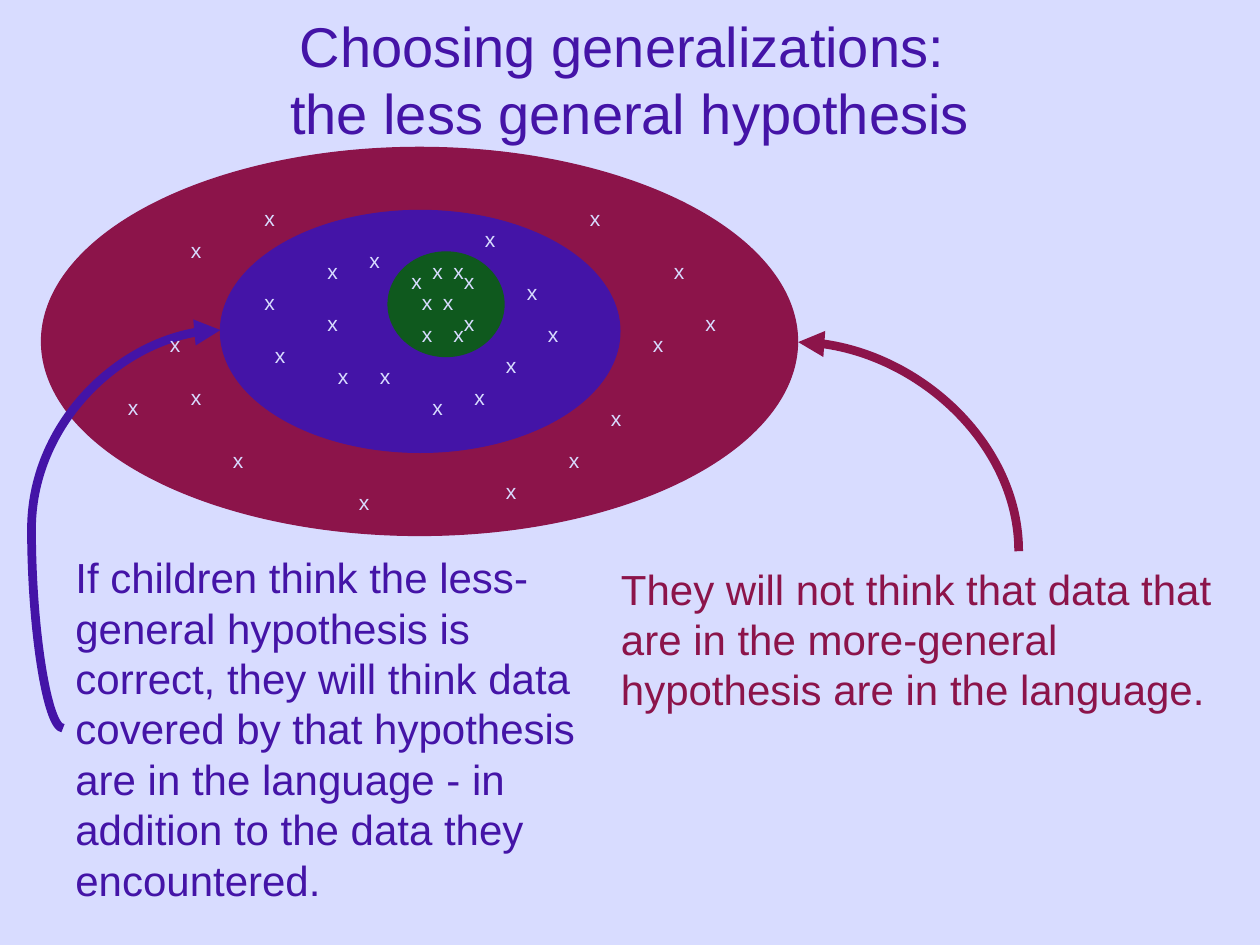
import pptx
import pptx.dml.color
import pptx.enum.shapes
import pptx.enum.text
import pptx.oxml.ns
import pptx.oxml.xmlchemy
import pptx.util

Inches = pptx.util.Inches
Pt = pptx.util.Pt
Anchor = pptx.enum.text.MSO_ANCHOR
Align = pptx.enum.text.PP_ALIGN
AutoSize = pptx.enum.text.MSO_AUTO_SIZE

PALE, BLUE, RED, GREEN = "D8DCFF", "4414A7", "8C144A", "0F591E"
GRID = 12
NARROW_DATA = [
    (40, 24), (43, 25), (39, 30), (42, 30), (39, 27), (41, 27),
    (43, 29), (38, 25), (42, 24),
]
LESS_GENERAL_DATA = [
    (24, 27), (31, 34), (40, 37), (47, 33), (34, 23), (49, 26), (30, 29),
    (44, 36), (45, 21), (51, 30), (35, 34), (30, 24), (25, 32),
]
MORE_GENERAL_DATA = [
    (63, 24), (61, 31), (66, 29), (47, 45), (57, 38), (53, 42), (33, 46),
    (21, 42), (15, 31), (11, 37), (17, 22), (17, 36), (55, 19), (24, 19),
]


def color(hex_value):
    return pptx.dml.color.RGBColor.from_string(hex_value)


def apply(target, formats):
    for name, value in formats.items():
        setattr(target, name, value)


def add_element(parent, tag, **attributes):
    element = pptx.oxml.xmlchemy.OxmlElement(tag)
    for name, value in attributes.items():
        element.set(name, value)
    parent.append(element)


class SlideBuilder:
    font = "Arial"
    leading = 1.2
    arrow_width = 5

    def __init__(self, presentation):
        self.slide = presentation.slides.add_slide(presentation.slide_layouts[6])

    def background(self, fill):
        self.slide.background.fill.solid()
        self.slide.background.fill.fore_color.rgb = color(fill)

    def ellipse(self, left, top, width, height, fill):
        shape = self.slide.shapes.add_shape(
            pptx.enum.shapes.MSO_SHAPE.OVAL,
            Inches(left), Inches(top), Inches(width), Inches(height),
        )
        shape.shadow.inherit = False
        shape.fill.solid()
        shape.fill.fore_color.rgb = color(fill)
        shape.line.color.rgb = color(fill)
        shape.line.width = Pt(0.75)

    def text(self, left, top, width, height, words, size, ink, paragraph_format=None, **frame_format):
        box = self.slide.shapes.add_textbox(
            Inches(left), Inches(top), Inches(width), Inches(height)
        )
        frame = box.text_frame
        apply(frame, {"word_wrap": True, "auto_size": AutoSize.SHAPE_TO_FIT_TEXT, **frame_format})
        paragraph = frame.paragraphs[0]
        paragraph.text = words
        apply(paragraph, {"line_spacing": Pt(size * self.leading), **(paragraph_format or {})})
        for run in paragraph.runs:
            apply(run.font, {"name": self.font, "size": Pt(size)})
            run.font.color.rgb = color(ink)

    def data_points(self, positions):
        for column, row in positions:
            self.text(column / GRID, row / GRID, 0.28, 0.3, "x", 12, PALE, word_wrap=False)

    def curved_arrow(self, start, end, ink, preset="curvedConnector3", bend=None, rotation=0):
        connector = self.slide.shapes.add_connector(
            pptx.enum.shapes.MSO_CONNECTOR.CURVE,
            Inches(start[0]), Inches(start[1]), Inches(end[0]), Inches(end[1]),
        )
        connector.line.color.rgb = color(ink)
        connector.line.width = Pt(self.arrow_width)
        qualified = pptx.oxml.ns.qn
        properties = connector.element.spPr
        properties.find(qualified("a:xfrm")).set("rot", str(rotation * 60000))
        geometry = properties.find(qualified("a:prstGeom"))
        geometry.set("prst", preset)
        if bend is not None:
            guides = geometry.find(qualified("a:avLst"))
            add_element(guides, "a:gd", name="adj1", fmla=f"val {round(bend * 100000)}")
        add_element(properties.find(qualified("a:ln")), "a:tailEnd", type="triangle")
        add_element(properties, "a:effectLst")


def main():
    presentation = pptx.Presentation()
    apply(presentation, {"slide_width": Inches(10), "slide_height": Inches(7.5)})
    builder = SlideBuilder(presentation)
    builder.background(PALE)
    builder.text(
        0.75, 0, 8.5, 1.25,
        "Choosing generalizations: \vthe less general hypothesis", 32, BLUE,
        {"alignment": Align.CENTER},
        vertical_anchor=Anchor.MIDDLE, auto_size=AutoSize.NONE,
    )
    builder.ellipse(0.33, 1.17, 6, 3.08, RED)
    builder.ellipse(1.75, 1.67, 3.17, 1.92, BLUE)
    builder.ellipse(3.08, 2, 0.92, 0.83, GREEN)
    builder.text(
        0.5, 4.33, 4.25, 2.9,
        "If children think the less-general hypothesis is correct, they will think "
        "data covered by that hypothesis are in the language - in addition to the "
        "data they encountered.",
        24, BLUE,
    )
    builder.curved_arrow((0.5, 5.78), (1.75, 2.62), BLUE, bend=-0.2)
    for positions in (NARROW_DATA, LESS_GENERAL_DATA, MORE_GENERAL_DATA):
        builder.data_points(positions)
    builder.text(
        4.83, 4.42, 4.92, 1.3,
        "They will not think that data that are in the more-general hypothesis "
        "are in the language.",
        24, RED,
    )
    builder.curved_arrow((8.04, 2.67), (6.38, 4.42), RED, "curvedConnector2", rotation=90)
    presentation.save("out.pptx")


if __name__ == "__main__":
    main()
